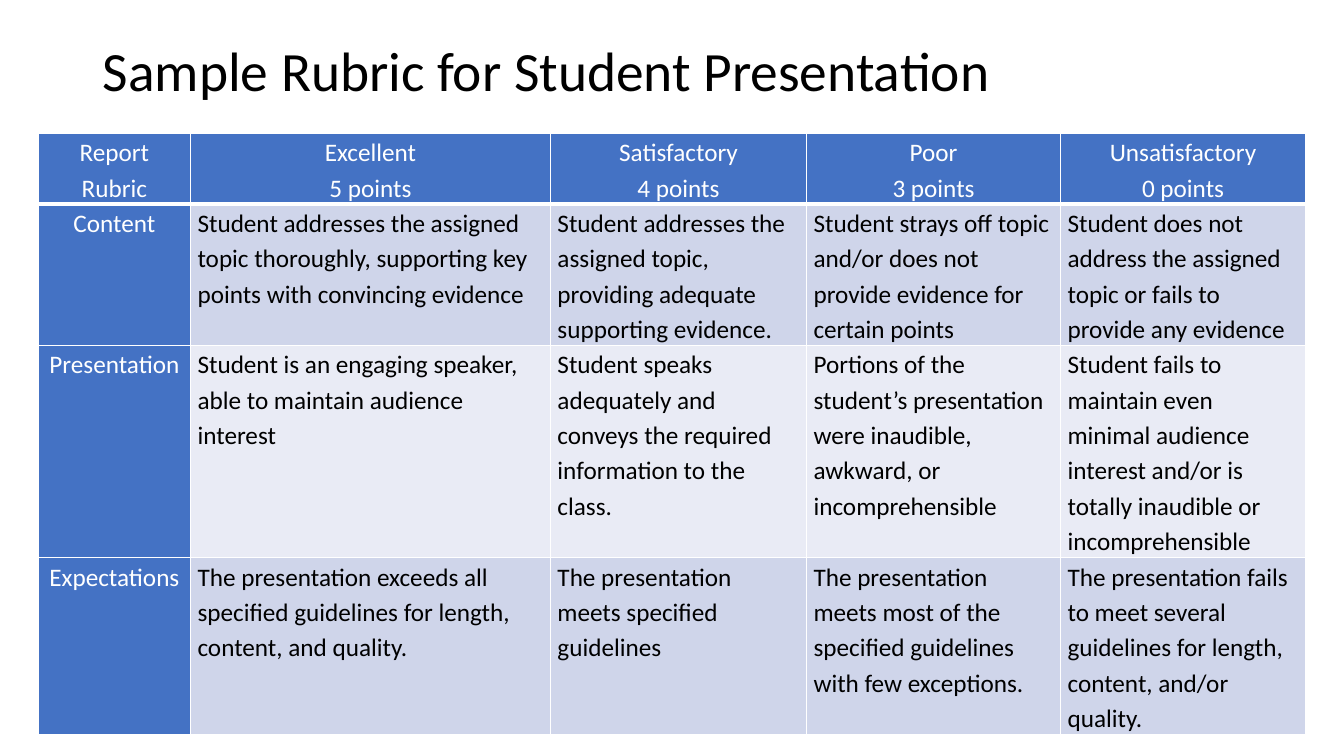
from lxml import etree
from pptx import Presentation
from pptx.dml.color import RGBColor
from pptx.enum.text import MSO_ANCHOR, PP_ALIGN
from pptx.oxml.ns import qn
from pptx.util import Inches, Pt

CENTER = PP_ALIGN.CENTER
LEFT = PP_ALIGN.LEFT
MIDDLE = MSO_ANCHOR.MIDDLE
FONT = "Calibri"
BLACK, WHITE, BLUE = "000000", "FFFFFF", "4472C4"
BANDS = ["E9EBF5", "CFD5EA"]
COLUMN_WIDTHS = [1.51, 3.57, 2.54, 2.52, 2.43]
ROW_HEIGHTS = [0.48, 1.33, 1.64, 1.33]
RUBRIC = [
    ["Report Rubric", "Excellent\n5 points", "Satisfactory\n4 points",
     "Poor\n3 points", "Unsatisfactory\n0 points"],
    ["Content",
     "Student addresses the assigned topic thoroughly, supporting key points with convincing evidence",
     "Student addresses the assigned topic, providing adequate supporting evidence.",
     "Student strays off topic and/or does not provide evidence for certain points",
     "Student does not address the assigned topic or fails to provide any evidence"],
    ["Presentation",
     "Student is an engaging speaker, able to maintain audience interest",
     "Student speaks adequately and conveys the required information to the class.",
     "Portions of the student’s presentation were inaudible, awkward, or incomprehensible",
     "Student fails to maintain even minimal audience interest and/or is totally inaudible or incomprehensible"],
    ["Expectations",
     "The presentation exceeds all specified guidelines for length, content, and quality.",
     "The presentation meets specified guidelines",
     "The presentation meets most of the specified guidelines with few exceptions.",
     "The presentation fails to meet several guidelines for length, content, and/or quality."],
]


def format_paragraph(paragraph, size, color, alignment, line_spacing):
    paragraph.alignment = alignment
    paragraph.line_spacing = line_spacing
    for run in paragraph.runs:
        run.font.name = FONT
        run.font.size = Pt(size)
        run.font.bold = False
        run.font.color.rgb = RGBColor.from_string(color)


def add_border(cell, side, width):
    line = etree.SubElement(cell._tc.get_or_add_tcPr(), qn(f"a:ln{side}"), w=str(Pt(width)))
    fill = etree.SubElement(line, qn("a:solidFill"))
    etree.SubElement(fill, qn("a:srgbClr"), val=WHITE)


presentation = Presentation()
presentation.slide_width = Inches(13.33)
presentation.slide_height = Inches(7.5)
slide = presentation.slides.add_slide(presentation.slide_layouts[5])

title = slide.shapes.title
title.left, title.top = Inches(0.92), Inches(0.4)
title.width, title.height = Inches(11.5), Inches(0.66)
title.text_frame.text = "Sample Rubric for Student Presentation"
title.text_frame.vertical_anchor = MIDDLE
format_paragraph(title.text_frame.paragraphs[0], 39.6, BLACK, LEFT, 0.9)

table_frame = slide.shapes.add_table(
    len(ROW_HEIGHTS), len(COLUMN_WIDTHS),
    Inches(0.38), Inches(1.32), Inches(12.58), Inches(5.78))
table = table_frame.table
for column, width in zip(table.columns, COLUMN_WIDTHS):
    column.width = Inches(width)
for row, height in zip(table.rows, ROW_HEIGHTS):
    row.height = Inches(height)
table_frame.height = Inches(5.78)

for row_index, texts in enumerate(RUBRIC):
    for column_index, text in enumerate(texts):
        is_heading = row_index == 0 or column_index == 0
        cell = table.cell(row_index, column_index)
        cell.margin_left = cell.margin_right = Inches(0.07)
        cell.margin_top = cell.margin_bottom = 0
        for side in "LRTB":
            add_border(cell, side, 3 if row_index == 0 and side == "B" else 1)
        cell.fill.solid()
        cell.fill.fore_color.rgb = RGBColor.from_string(BLUE if is_heading else BANDS[row_index % 2])
        cell.text_frame.text = text
        for paragraph in cell.text_frame.paragraphs:
            format_paragraph(paragraph, 18, WHITE if is_heading else BLACK,
                             CENTER if is_heading else LEFT, 1.15)

presentation.save("out.pptx")
